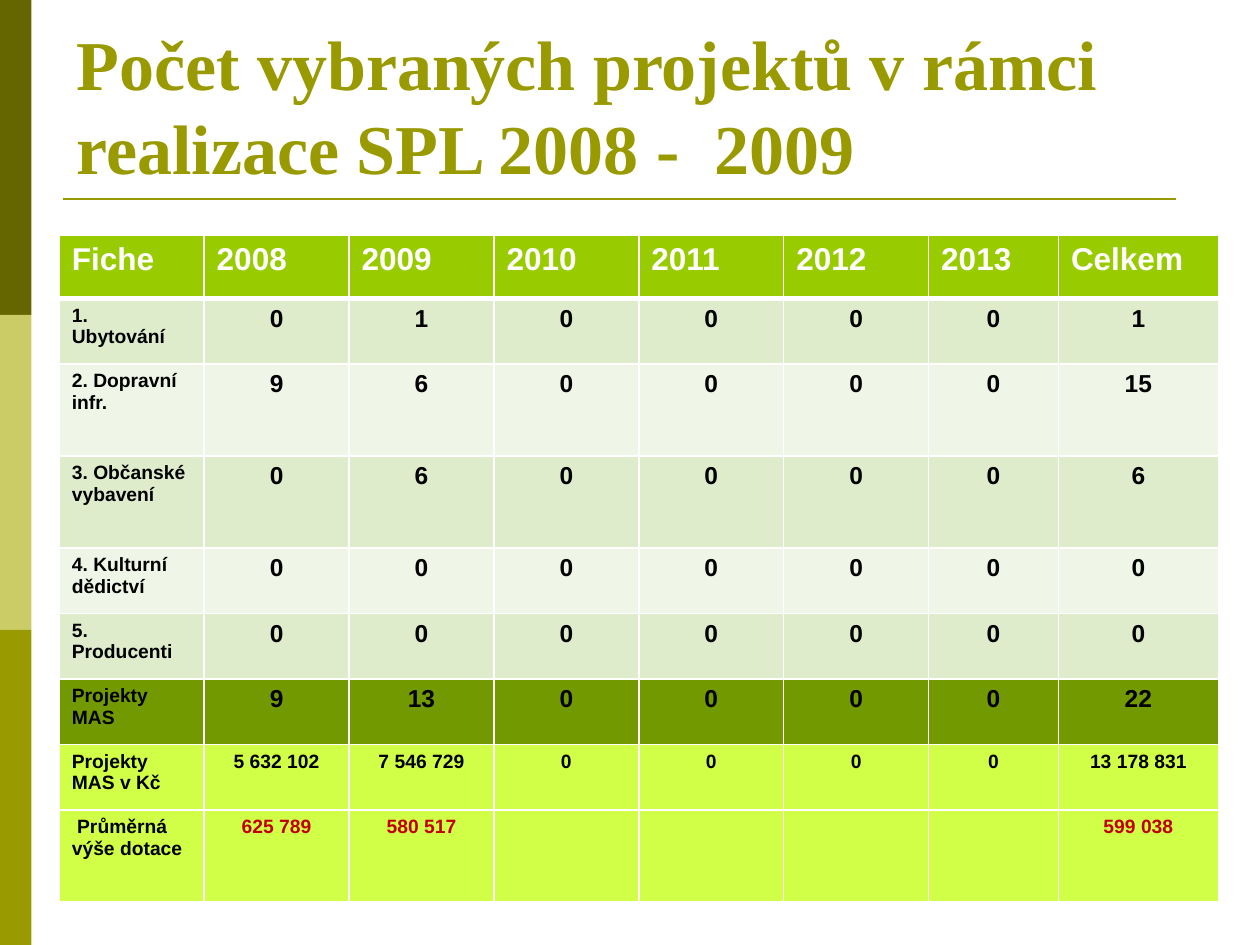
from lxml import etree
from pptx import Presentation
from pptx.dml.color import RGBColor
from pptx.enum.shapes import MSO_CONNECTOR, MSO_SHAPE
from pptx.enum.text import MSO_ANCHOR, MSO_AUTO_SIZE, PP_ALIGN
from pptx.oxml.ns import qn
from pptx.util import Inches, Pt

LEFT, CENTER = PP_ALIGN.LEFT, PP_ALIGN.CENTER
RECTANGLE, STRAIGHT = MSO_SHAPE.RECTANGLE, MSO_CONNECTOR.STRAIGHT
BOTTOM, NO_AUTOFIT = MSO_ANCHOR.BOTTOM, MSO_AUTO_SIZE.NONE

OLIVE = RGBColor(0x99, 0x99, 0x00)
DARK_OLIVE = RGBColor(0x66, 0x66, 0x00)
SAND = RGBColor(0xCC, 0xCC, 0x66)
WHITE = RGBColor(0xFF, 0xFF, 0xFF)
BLACK = RGBColor(0x00, 0x00, 0x00)
RED = RGBColor(0xC0, 0x00, 0x00)
HEADER_GREEN = RGBColor(0x99, 0xCC, 0x00)
BAND_DARK = RGBColor(0xDE, 0xEC, 0xCC)
BAND_LIGHT = RGBColor(0xEF, 0xF6, 0xE7)
TOTAL_GREEN = RGBColor(0x73, 0x99, 0x00)
LIME = RGBColor(0xD1, 0xFF, 0x47)


def write_text(frame, text, size=14, color=BLACK, font="Arial", align=LEFT):
    para = frame.paragraphs[0]
    para.alignment = align
    span = para.add_run()
    span.text = text
    span.font.name = font
    span.font.size = Pt(size)
    span.font.bold = True
    span.font.color.rgb = color


def set_borders(cell, **widths):
    """Draw white borders; widths in points by side, 1 unless given."""
    properties = cell._tc.get_or_add_tcPr()
    for index, side in enumerate(("lnL", "lnR", "lnT", "lnB")):
        line = etree.Element(qn("a:" + side), w=str(Pt(widths.get(side, 1))))
        fill = etree.SubElement(line, qn("a:solidFill"))
        etree.SubElement(fill, qn("a:srgbClr"), val=str(WHITE))
        properties.insert(index, line)


deck = Presentation()
deck.slide_width, deck.slide_height = Inches(10), Inches(7.5)
page = deck.slides.add_slide(deck.slide_layouts[5])

# Side bands
for index, color in enumerate((DARK_OLIVE, SAND, OLIVE)):
    band = page.shapes.add_shape(
        RECTANGLE, 0, Inches(2.5 * index), Inches(0.25), Inches(2.5))
    band.shadow.inherit = False
    band.fill.solid()
    band.fill.fore_color.rgb = color
    band.line.fill.background()

# Title and the rule below it
title = page.shapes.title
title.left, title.top = Inches(0.51), Inches(0.3)
title.width, title.height = Inches(9), Inches(1.25)
title.text_frame.word_wrap = True
title.text_frame.auto_size = NO_AUTOFIT
title.text_frame.vertical_anchor = BOTTOM
write_text(title.text_frame,
           "Počet vybraných projektů v rámci realizace SPL 2008 -  2009",
           size=40, color=OLIVE, font="Times New Roman")

rule = page.shapes.add_connector(
    STRAIGHT, Inches(0.5), Inches(1.58), Inches(9.33), Inches(1.58))
rule.line.color.rgb = OLIVE
rule.line.width = Pt(1.5)
etree.SubElement(rule._element.spPr, qn("a:effectLst"))

# Table rows: height, fill, value size, value colour, texts
rows = [
    (0.5, HEADER_GREEN, 18, WHITE,
     ["Fiche", "2008", "2009", "2010", "2011", "2012", "2013", "Celkem"]),
    (0.52, BAND_DARK, 14, BLACK, ["1.  Ubytování", "0", "1", "0", "0", "0", "0", "1"]),
    (0.73, BAND_LIGHT, 14, BLACK, ["2. Dopravní infr.", "9", "6", "0", "0", "0", "0", "15"]),
    (0.73, BAND_DARK, 14, BLACK, ["3. Občanské vybavení", "0", "6", "0", "0", "0", "0", "6"]),
    (0.52, BAND_LIGHT, 14, BLACK, ["4. Kulturní dědictví", "0", "0", "0", "0", "0", "0", "0"]),
    (0.52, BAND_DARK, 14, BLACK, ["5. Producenti", "0", "0", "0", "0", "0", "0", "0"]),
    (0.52, TOTAL_GREEN, 14, BLACK, ["Projekty MAS", "9", "13", "0", "0", "0", "0", "22"]),
    (0.52, LIME, 11, BLACK,
     ["Projekty MAS v Kč", "5 632 102", "7 546 729", "0", "0", "0", "0", "13 178 831"]),
    (0.73, LIME, 11, RED,
     [" Průměrná výše dotace", "625 789", "580 517", "", "", "", "", "599 038"]),
]
column_widths = [1.15] * 6 + [1.03, 1.27]

table = page.shapes.add_table(
    len(rows), len(column_widths), Inches(0.47), Inches(1.87),
    Inches(sum(column_widths)), Inches(sum(row[0] for row in rows))).table
for column, width in zip(table.columns, column_widths):
    column.width = Inches(width)

for r, (height, fill, size, color, texts) in enumerate(rows):
    table.rows[r].height = Inches(height)
    for c, text in enumerate(texts):
        cell = table.cell(r, c)
        cell.fill.solid()
        cell.fill.fore_color.rgb = fill
        if r == 0:
            set_borders(cell, lnB=3)
        else:
            set_borders(cell, lnT=3 if r == 1 else 1)
        if r == 0:
            write_text(cell.text_frame, text, size=size, color=color)
        elif c == 0:
            write_text(cell.text_frame, text, size=11)
        elif text:
            write_text(cell.text_frame, text, size=size, color=color, align=CENTER)

deck.save("out.pptx")
